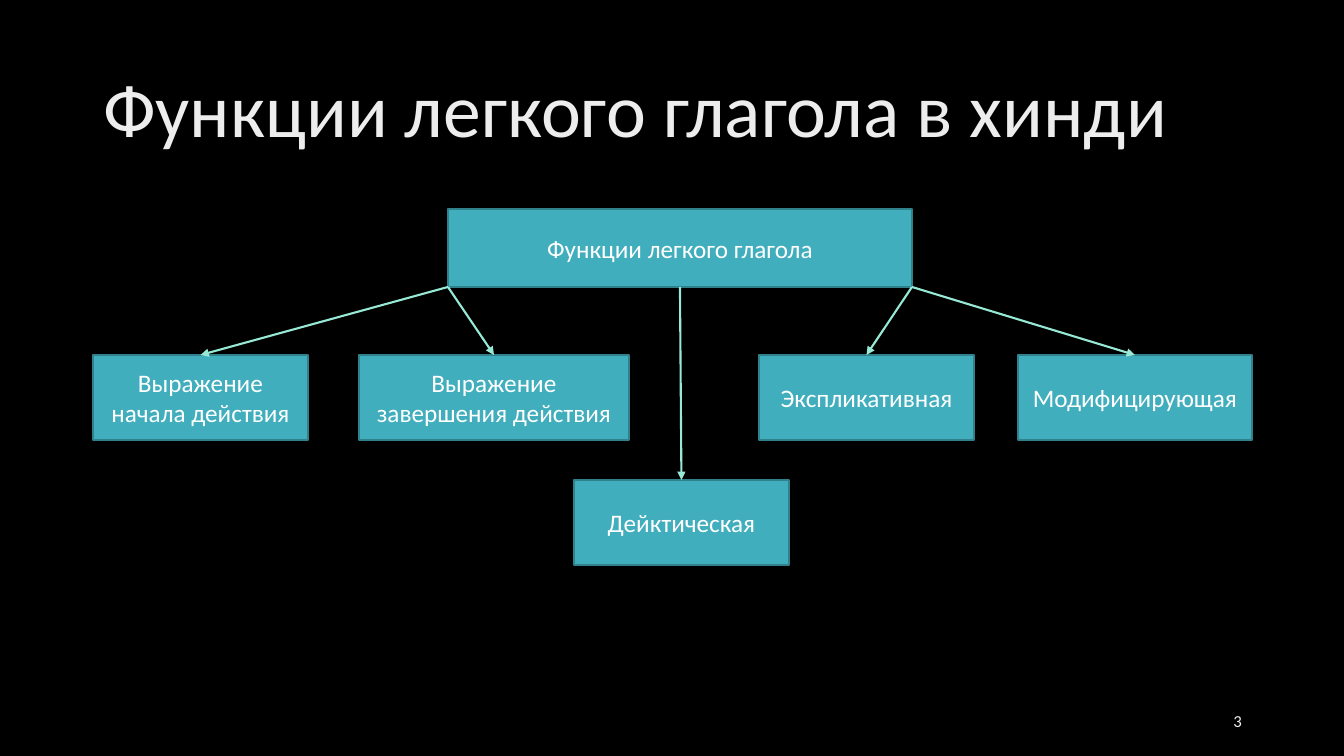
from lxml import etree
from pptx import Presentation
from pptx import util as u
from pptx.dml.color import RGBColor
from pptx.enum import shapes, text
from pptx.oxml.ns import qn

THEME = {
    "font": "Calibri", "back": "000000", "title": "EDEDED", "text": "FFFFFF",
    "fill": "41AEBD", "edge": "30818C", "arrow": "97E9D5",
    "big": 54, "mid": 18, "small": 12,
}
SCALE = 12192000 / 1344


def px(*nums):
    return [u.Emu(round(n * SCALE)) for n in nums]


def write(shape, words, size, color, align):
    frame = shape.text_frame
    frame.text = words
    frame.word_wrap = True
    frame.auto_size = text.MSO_AUTO_SIZE.NONE
    frame.vertical_anchor = text.MSO_ANCHOR.MIDDLE
    par = frame.paragraphs[0]
    par.alignment = align
    font = par.runs[0].font
    font.name = THEME["font"]
    font.size = u.Pt(THEME[size])
    font.color.rgb = RGBColor.from_string(THEME[color])
    return par


deck = Presentation()
deck.slide_width, deck.slide_height = px(1344, 756)
slide = deck.slides.add_slide(deck.slide_layouts[5])
back = slide.background.fill
back.solid()
back.fore_color.rgb = RGBColor.from_string(THEME["back"])

title = slide.shapes.title
title.left, title.top, title.width, title.height = px(93, 40, 1159, 146)
head = write(title, "Функции легкого глагола в хинди", "big", "title", text.PP_ALIGN.LEFT)
head.line_spacing = 0.9

nodes = [
    ("Функции легкого глагола", 448, 209, 464, 78),
    ("Выражение начала действия", 93, 355, 215, 85),
    ("Выражение завершения действия", 359, 355, 270, 85),
    ("Экспликативная", 759, 355, 215, 85),
    ("Модифицирующая", 1018, 355, 234, 85),
    ("Дейктическая", 574, 480, 215, 85),
]
boxes = []
for words, *place in nodes:
    box = slide.shapes.add_shape(shapes.MSO_SHAPE.RECTANGLE, *px(*place))
    box.shadow.inherit = False
    box.fill.solid()
    box.fill.fore_color.rgb = RGBColor.from_string(THEME["fill"])
    box.line.color.rgb = RGBColor.from_string(THEME["edge"])
    box.line.width = u.Pt(1)
    write(box, words, "mid", "text", text.PP_ALIGN.CENTER)
    boxes.append(box)

root, *kids = boxes
left, mid, right = root.left, root.left + root.width // 2, root.left + root.width
base = root.top + root.height
for kid, start in zip(kids, (left, left, right, right, mid)):
    arrow = slide.shapes.add_connector(
        shapes.MSO_CONNECTOR.STRAIGHT, start, base, kid.left + kid.width // 2, kid.top)
    if start == mid:
        arrow.begin_connect(root, 2)
    arrow.end_connect(kid, 0)
    arrow.line.color.rgb = RGBColor.from_string(THEME["arrow"])
    arrow.line.width = u.Pt(1.5)
    props = arrow._element.spPr
    etree.SubElement(props.find(qn("a:ln")), qn("a:tailEnd")).set("type", "triangle")
    etree.SubElement(props, qn("a:effectLst"))

page = slide.shapes.add_textbox(*px(950, 701, 302, 40))
write(page, "3", "small", "title", text.PP_ALIGN.RIGHT)

deck.save("out.pptx")
